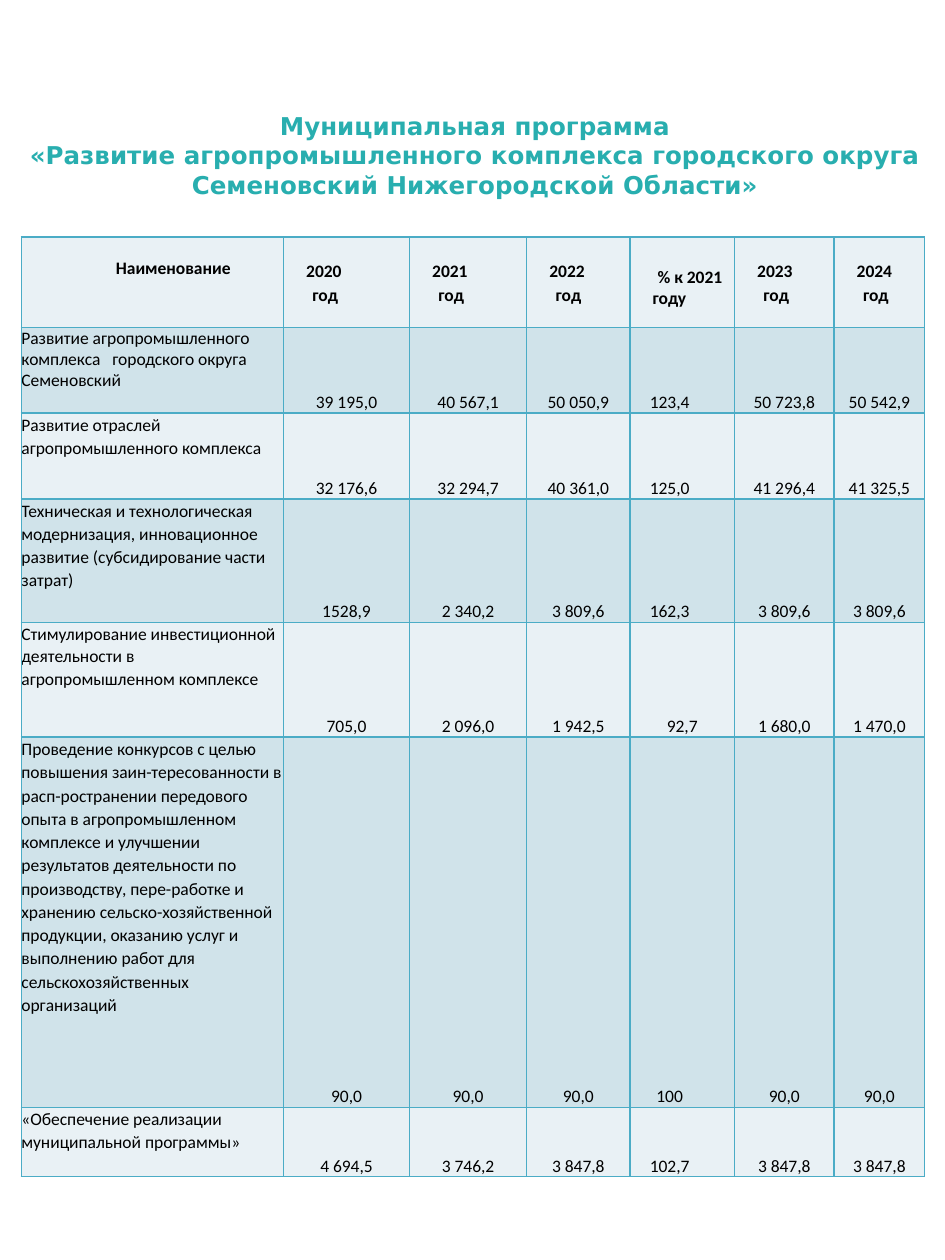
from lxml import etree
from pptx import Presentation
from pptx.dml.color import RGBColor
from pptx.enum import text
from pptx.oxml import ns
from pptx.util import Inches, Pt

COLORS = {"title": "28AEAF", "text": "000000", "border": "4BACC6",
          "light": "E9F1F5", "dark": "D0E3EA"}
COLUMN_WIDTHS = [2.08, 1, 0.93, 0.82, 0.83, 0.79, 0.72]
ROW_HEIGHTS = [0.72, 0.68, 0.68, 0.98, 0.91, 2.94, 0.55]
YEARS = {1: "2020", 2: "2021", 3: "2022", 5: "2023", 6: "2024"}
PERCENT_COLUMN = 4

# Name, line spacing in points (None is single), right margin of the percentage, values
PROGRAMS = [
    ("Развитие агропромышленного комплекса   городского округа Семеновский", None, 0.2,
     ["39 195,0", "40 567,1", "50 050,9", "123,4", "50 723,8", "50 542,9"]),
    ("Развитие отраслей агропромышленного комплекса", 13, 0.2,
     ["32 176,6", "32 294,7", "40 361,0", "125,0", "41 296,4", "41 325,5"]),
    ("Техническая и технологическая модернизация, инновационное развитие "
     "(субсидирование части затрат)", 13.2, 0.2,
     ["1528,9", "2 340,2", "3 809,6", "162,3", "3 809,6", "3 809,6"]),
    ("Стимулирование инвестиционной деятельности в агропромышленном комплексе", 12.9, 0,
     ["705,0", "2 096,0", "1 942,5", "92,7", "1 680,0", "1 470,0"]),
    ("Проведение конкурсов с целью повышения заин-тересованности в расп-ространении "
     "передового опыта в агропромышленном комплексе и улучшении результатов деятельности "
     "по производству, пере-работке и хранению сельско-хозяйственной продукции, оказанию "
     "услуг и выполнению работ для сельскохозяйственных организаций", 13.3, 0.2,
     ["90,0", "90,0", "90,0", "100", "90,0", "90,0"]),
    ("«Обеспечение реализации муниципальной программы»", 13.2, 0.2,
     ["4 694,5", "3 746,2", "3 847,8", "102,7", "3 847,8", "3 847,8"]),
]


def add_run(paragraph, content, size, font, color, bold=False):
    run = paragraph.add_run()
    run.text = content
    run.font.size = Pt(size)
    run.font.name = font
    run.font.bold = bold
    run.font.color.rgb = RGBColor.from_string(COLORS[color])


def set_indent(paragraph, left, first=0):
    properties = paragraph._p.get_or_add_pPr()
    properties.set("marL", str(Inches(left)))
    properties.set("indent", str(Inches(first)))


def style_cell(cell, fill):
    """Clear the margins, draw the four borders and fill the cell."""
    cell.margin_left = cell.margin_right = cell.margin_top = cell.margin_bottom = 0
    properties = cell._tc.get_or_add_tcPr()
    for side in ("lnL", "lnR", "lnT", "lnB"):
        line = etree.SubElement(properties, ns.qn("a:" + side), w=str(Pt(1)))
        solid = etree.SubElement(line, ns.qn("a:solidFill"))
        etree.SubElement(solid, ns.qn("a:srgbClr"), val=COLORS["border"])
    cell.fill.solid()
    cell.fill.fore_color.rgb = RGBColor.from_string(COLORS[fill])


def write_cell(cell, lines, bold=False, spacing=None, align=None):
    """Write one paragraph for each (content, left indent, first-line indent)."""
    frame = cell.text_frame
    for index, (content, left, first) in enumerate(lines):
        paragraph = frame.add_paragraph() if index else frame.paragraphs[0]
        set_indent(paragraph, left, first)
        paragraph.alignment = align
        if spacing:
            paragraph.line_spacing = Pt(spacing)
        add_run(paragraph, content, 10, "Calibri", "text", bold)


def fill_header(table):
    name, percent = table.cell(0, 0), table.cell(0, PERCENT_COLUMN)
    write_cell(name, [("Наименование", 0.75, 0)], bold=True)
    name.margin_top = Inches(0.17)
    write_cell(percent, [("% к 2021 году", 0.18, 0.04)], bold=True)
    percent.margin_top = Inches(0.24)
    for column, year in YEARS.items():
        cell = table.cell(0, column)
        write_cell(cell, [(year, 0.18, 0), ("год", 0.23, 0)], bold=True, spacing=13.2)
        cell.margin_top = Inches(0.18)


def fill_programs(table):
    for row, (name, spacing, percent_margin, values) in enumerate(PROGRAMS, 1):
        write_cell(table.cell(row, 0), [(name, 0, 0)], spacing=spacing)
        for column, value in enumerate(values, 1):
            cell = table.cell(row, column)
            cell.vertical_anchor = text.MSO_ANCHOR.BOTTOM
            write_cell(cell, [(value, 0, 0)], align=text.PP_ALIGN.CENTER)
        table.cell(row, PERCENT_COLUMN).margin_right = Inches(percent_margin)


def add_program_table(slide, left, top, width, height):
    shape = slide.shapes.add_table(len(ROW_HEIGHTS), len(COLUMN_WIDTHS), Inches(left),
                                   Inches(top), Inches(width), Inches(height))
    table = shape.table
    for column, size in zip(table.columns, COLUMN_WIDTHS):
        column.width = Inches(size * width / sum(COLUMN_WIDTHS))
    for index, (row, size) in enumerate(zip(table.rows, ROW_HEIGHTS)):
        row.height = Inches(size * height / sum(ROW_HEIGHTS))
        for cell in row.cells:
            style_cell(cell, "dark" if index % 2 else "light")
    fill_header(table)
    fill_programs(table)


def place_title(slide, left, top, width, height):
    title = slide.shapes.title
    title.left, title.top = Inches(left), Inches(top)
    title.width, title.height = Inches(width), Inches(height)
    frame = title.text_frame
    frame.word_wrap = True
    frame.auto_size = text.MSO_AUTO_SIZE.NONE
    frame.vertical_anchor = text.MSO_ANCHOR.TOP
    paragraph = frame.paragraphs[0]
    paragraph.alignment = text.PP_ALIGN.CENTER
    add_run(paragraph, "Муниципальная программа", 14, "DejaVu Sans", "title", True)
    paragraph.add_line_break()
    add_run(paragraph, "«Развитие агропромышленного комплекса городского округа "
            "Семеновский Нижегородской Области»", 14, "DejaVu Sans", "title", True)


def main():
    presentation = Presentation()
    presentation.slide_width, presentation.slide_height = Inches(7.5), Inches(10)
    slide = presentation.slides.add_slide(presentation.slide_layouts[5])
    # Table of programme spending by year
    add_program_table(slide, 0.17, 1.88, 7.17, 7.46)
    # Heading
    place_title(slide, 0.02, 0.83, 7.5, 0.81)
    presentation.save("out.pptx")


if __name__ == "__main__":
    main()
